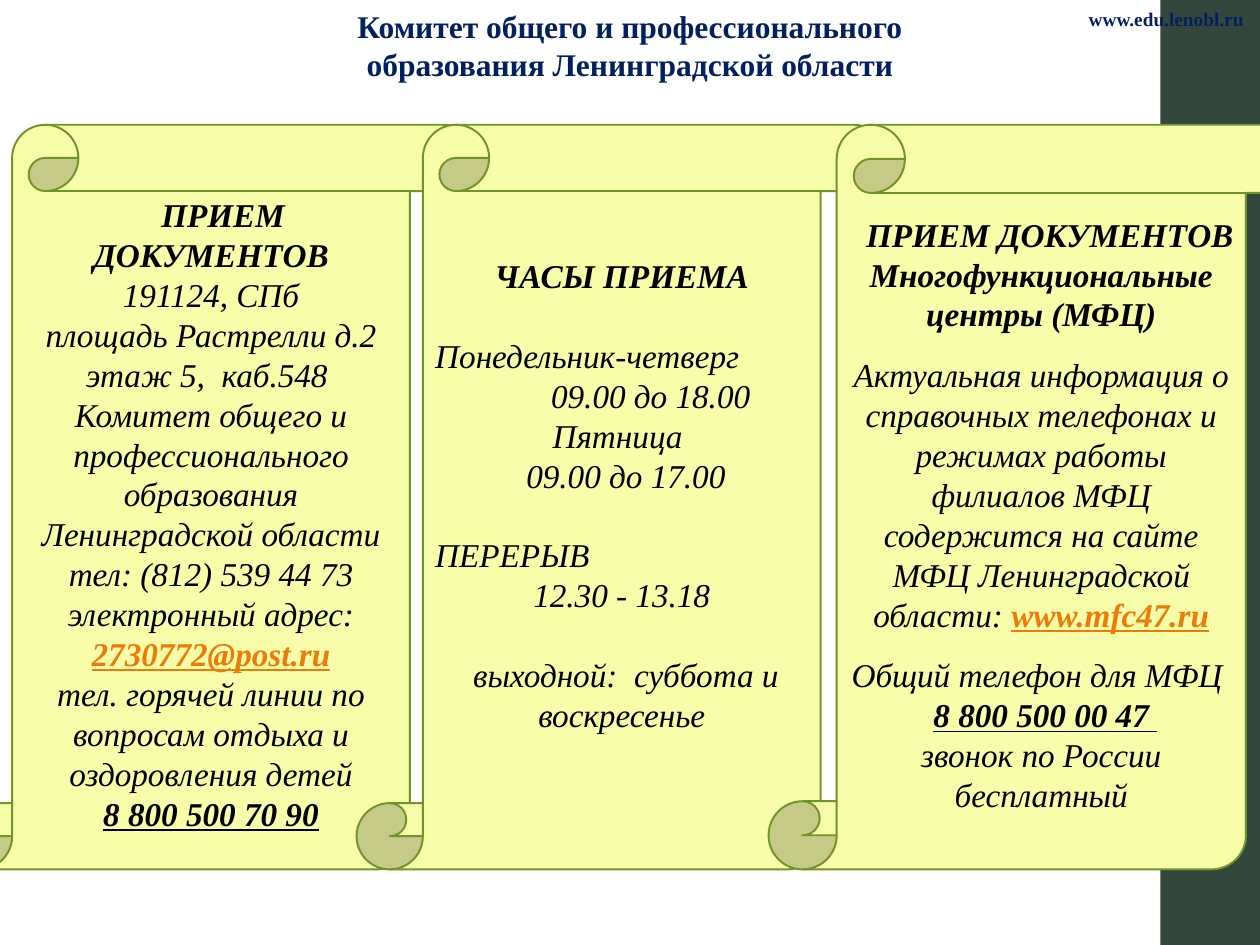
from pptx import Presentation
from pptx.dml.color import RGBColor
from pptx.enum.shapes import MSO_SHAPE as Shape
from pptx.enum.text import MSO_ANCHOR as Anchor, PP_ALIGN as Align
from pptx.util import Inches, Pt

COLORS = {
    "band": "33473C",
    "heading": "002060",
    "scroll": "F7FDA9",
    "outline": "6F9428",
    "text": "000000",
    "address": "EE7B08",
}
FONT = "Times New Roman"
LINE_GAP = 22.8


def color(name):
    return RGBColor.from_string(COLORS[name])


def style(para, size, name, align):
    para.alignment = align
    para.font.name = FONT
    para.font.size = Pt(size)
    para.font.color.rgb = color(name)


deck = Presentation()
deck.slide_width, deck.slide_height = Inches(10), Inches(7.5)
page = deck.slides.add_slide(deck.slide_layouts[6])

band = page.shapes.add_shape(Shape.RECTANGLE, Inches(9.21), 0, Inches(0.79), Inches(7.5))
band.shadow.inherit = False
band.fill.solid()
band.fill.fore_color.rgb = color("band")
band.line.fill.background()

headings = [
    (2.5, 5, 0.71, "Комитет общего и профессионального образования Ленинградской области", 18, Align.CENTER, True),
    (8.52, 1.45, 0.29, "www.edu.lenobl.ru", 11, Align.RIGHT, False),
]
for left, width, height, words, size, align, wrap in headings:
    box = page.shapes.add_textbox(Inches(left), Inches(0.01), Inches(width), Inches(height))
    box.text_frame.word_wrap = wrap
    para = box.text_frame.paragraphs[0]
    para.text = words
    style(para, size, "heading", align)
    para.font.bold = True

# Each paragraph: alignment, space before, indents, then (words, look) spans.
documents = [
    (Align.CENTER, 0, {"indent": 0.19}, [("ПРИЕМ ДОКУМЕНТОВ", "bold")]),
    (Align.CENTER, 0, {}, [("191124, СПб", "plain")]),
    (Align.CENTER, 0, {}, [("площадь Растрелли д.2 этаж 5,  каб.548 ", "plain")]),
    (Align.CENTER, 0, {}, [("Комитет общего и профессионального образования Ленинградской области", "plain")]),
    (Align.CENTER, 0, {}, [("тел: (812) 539 44 73", "plain")]),
    (Align.CENTER, 0, {}, [("электронный адрес: ", "plain"), ("2730772@post.ru", "address")]),
    (Align.CENTER, 0, {}, [("тел. горячей линии по вопросам отдыха и оздоровления детей", "plain")]),
    (Align.CENTER, 0, {}, [("8 800 500 70 90", "phone")]),
]
hours = [
    (Align.CENTER, 0, {}, [("ЧАСЫ ПРИЕМА", "bold")]),
    (Align.LEFT, LINE_GAP, {}, [("Понедельник-четверг", "plain")]),
    (Align.CENTER, 0, {"marL": 0.46}, [("09.00 до 18.00", "plain")]),
    (Align.CENTER, 0, {}, [("Пятница ", "plain")]),
    (Align.CENTER, 0, {}, [(" 09.00 до 17.00", "plain")]),
    (Align.LEFT, LINE_GAP, {}, [("ПЕРЕРЫВ", "plain")]),
    (Align.CENTER, 0, {}, [("12.30 - 13.18", "plain")]),
    (Align.CENTER, LINE_GAP, {}, [(" выходной:  суббота и воскресенье", "plain")]),
]
centres = [
    (Align.RIGHT, 0, {}, [("ПРИЕМ ДОКУМЕНТОВ", "bold")]),
    (Align.CENTER, 0, {}, [("Многофункциональные центры (МФЦ)", "bold")]),
    (Align.CENTER, 12, {}, [
        ("Актуальная информация о справочных телефонах и режимах работы филиалов МФЦ "
         "содержится на сайте МФЦ Ленинградской области: ", "plain"),
        ("www.mfc47.ru", "address"),
    ]),
    (Align.CENTER, 12, {}, [("Общий телефон для МФЦ ", "plain")]),
    (Align.CENTER, 0, {}, [(" ", "plain"), ("8 800 500 00 47 ", "phone")]),
    (Align.CENTER, 0, {}, [("звонок по России бесплатный", "plain")]),
]

scrolls = [
    (-0.43, 4.21, 0.05, documents),
    (2.83, 4.21, 0.35, hours),
    (6.1, 4.33, 0.05, centres),
]
for left, width, bottom, paragraphs in scrolls:
    scroll = page.shapes.add_shape(
        Shape.VERTICAL_SCROLL, Inches(left), Inches(0.99), Inches(width), Inches(5.91))
    scroll.shadow.inherit = False
    scroll.adjustments[0] = 0.125
    scroll.fill.solid()
    scroll.fill.fore_color.rgb = color("scroll")
    scroll.line.color.rgb = color("outline")
    scroll.line.width = Pt(1.1)
    frame = scroll.text_frame
    frame.word_wrap = True
    frame.vertical_anchor = Anchor.MIDDLE
    frame.margin_bottom = Inches(bottom)
    for index, (align, before, indents, spans) in enumerate(paragraphs):
        para = frame.add_paragraph() if index else frame.paragraphs[0]
        style(para, 19, "text", align)
        para.font.italic = True
        para.space_before = Pt(before)
        for side, amount in indents.items():
            para._p.get_or_add_pPr().set(side, str(Inches(amount)))
        for words, look in spans:
            span = para.add_run()
            span.text = words
            span.font.bold = look != "plain"
            span.font.underline = look in ("address", "phone")
            if look == "address":
                span.font.color.rgb = color("address")

deck.save("out.pptx")
